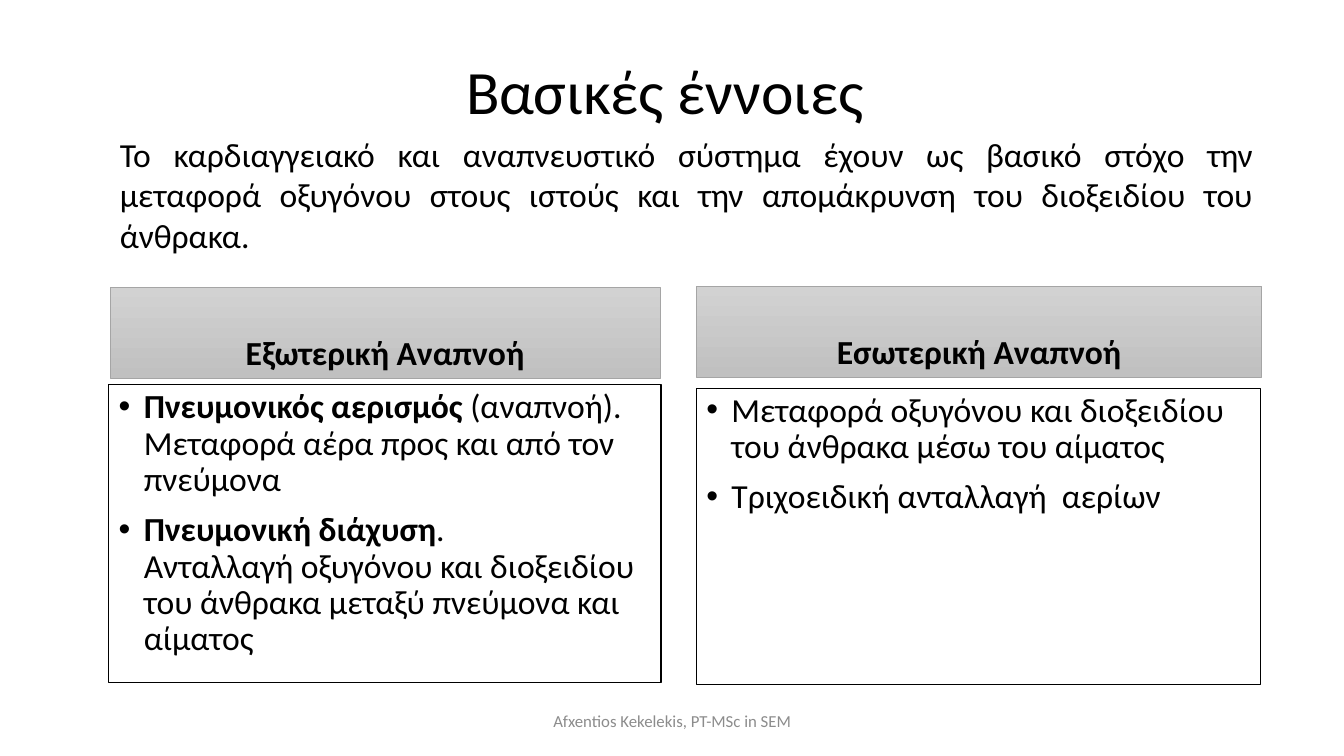
from dataclasses import dataclass

from lxml.etree import SubElement
from pptx import Presentation
from pptx.dml.color import RGBColor
from pptx.enum.shapes import MSO_SHAPE
from pptx.enum.text import MSO_ANCHOR, PP_ALIGN
from pptx.oxml.ns import qn
from pptx.util import Cm, Pt


@dataclass(frozen=True)
class Theme:
    font: str = "Calibri"
    ink: str = "000000"
    footer_ink: str = "8C8C8C"
    header_top: str = "D2D2D2"
    header_bottom: str = "C0C0C0"
    header_line: str = "A5A5A5"
    title_size: int = 44
    body_size: int = 24
    footer_size: int = 12


class SlideBuilder:
    def __init__(self, slide, theme):
        self.slide = slide
        self.theme = theme

    def style(self, run, size, color, bold=False):
        run.font.name = self.theme.font
        run.font.size = Pt(size)
        run.font.bold = bold
        run.font.color.rgb = RGBColor.from_string(color)

    def text(self, box, content, size, color=None, align=PP_ALIGN.CENTER,
             anchor=MSO_ANCHOR.MIDDLE, spacing=None):
        label = self.slide.shapes.add_textbox(*map(Cm, box))
        self.fill_frame(label.text_frame, content, size, color, align, anchor, spacing)

    def fill_frame(self, frame, content, size, color=None, align=PP_ALIGN.CENTER,
                   anchor=MSO_ANCHOR.MIDDLE, spacing=None, bold=False):
        frame.word_wrap = True
        frame.vertical_anchor = anchor
        frame.text = content
        paragraph = frame.paragraphs[0]
        paragraph.alignment = align
        paragraph.line_spacing = spacing
        self.style(paragraph.runs[0], size, color or self.theme.ink, bold)

    def panel(self, box, line_color, line_width):
        panel = self.slide.shapes.add_shape(MSO_SHAPE.RECTANGLE, *map(Cm, box))
        panel.shadow.inherit = False
        panel.line.color.rgb = RGBColor.from_string(line_color)
        panel.line.width = Pt(line_width)
        return panel

    def header(self, box, content):
        header = self.panel(box, self.theme.header_line, 0.5)
        header.fill.gradient()
        header.fill.gradient_angle = 270
        shades = (self.theme.header_top, self.theme.header_bottom)
        for stop, shade in zip(header.fill.gradient_stops, shades):
            stop.color.rgb = RGBColor.from_string(shade)
        self.fill_frame(header.text_frame, content, self.theme.body_size,
                        anchor=MSO_ANCHOR.BOTTOM, spacing=0.9, bold=True)

    def bullet_list(self, box, items):
        panel = self.panel(box, self.theme.ink, 0.75)
        panel.fill.background()
        frame = panel.text_frame
        frame.word_wrap = True
        frame.vertical_anchor = MSO_ANCHOR.TOP
        for index, (lead, lines) in enumerate(items):
            paragraph = frame.add_paragraph() if index else frame.paragraphs[0]
            self.bullet(paragraph, lead, lines)

    def bullet(self, paragraph, lead, lines):
        paragraph.alignment = PP_ALIGN.LEFT
        paragraph.line_spacing = 0.9
        paragraph.space_before = Pt(10)
        # Hanging bullet
        properties = paragraph._p.get_or_add_pPr()
        indent = Cm(0.635)
        properties.set("marL", str(indent))
        properties.set("indent", str(-indent))
        SubElement(properties, qn("a:buFont"), typeface="Arial")
        SubElement(properties, qn("a:buChar"), char="•")
        # Bold lead, then plain lines
        if lead:
            paragraph.text = lead
            self.style(paragraph.runs[0], self.theme.body_size, self.theme.ink, True)
        for index, line in enumerate(lines):
            if index:
                paragraph.add_line_break()
            run = paragraph.add_run()
            run.text = line
            self.style(run, self.theme.body_size, self.theme.ink)


def main():
    theme = Theme()
    presentation = Presentation()
    presentation.slide_width = Cm(33.87)
    presentation.slide_height = Cm(19.05)
    builder = SlideBuilder(
        presentation.slides.add_slide(presentation.slide_layouts[6]), theme)

    # Title and introduction
    builder.text((2.34, 1.02, 29.21, 2.72), "Βασικές έννοιες ",
                 theme.title_size, spacing=0.9)
    builder.text(
        (2.77, 3.25, 29.06, 3.33),
        "Το καρδιαγγειακό και αναπνευστικό σύστημα έχουν ως βασικό στόχο την "
        "μεταφορά οξυγόνου στους ιστούς και την απομάκρυνση του διοξειδίου του "
        "άνθρακα.",
        theme.body_size, align=PP_ALIGN.JUSTIFY, anchor=MSO_ANCHOR.TOP)

    # External respiration
    builder.header((2.77, 7.24, 13.87, 2.29), "Εξωτερική Αναπνοή")
    builder.bullet_list((2.74, 9.7, 13.92, 7.49), [
        ("Πνευμονικός αερισμός ",
         ["(αναπνοή). Μεταφορά αέρα προς και από τον πνεύμονα"]),
        ("Πνευμονική διάχυση",
         [".", "Ανταλλαγή οξυγόνου και διοξειδίου του άνθρακα μεταξύ "
               "πνεύμονα και αίματος"]),
    ])

    # Internal respiration
    builder.header((17.55, 7.21, 14.25, 2.29), "Εσωτερική Αναπνοή")
    builder.bullet_list((17.55, 9.78, 14.22, 7.47), [
        ("", ["Μεταφορά οξυγόνου και διοξειδίου του άνθρακα μέσω του αίματος"]),
        ("", ["Τριχοειδική ανταλλαγή  αερίων"]),
    ])

    # Footer
    builder.text((11.23, 17.65, 11.43, 1.02), "Afxentios Kekelekis, PT-MSc in SEM",
                 theme.footer_size, theme.footer_ink)

    presentation.save("out.pptx")


if __name__ == "__main__":
    main()
